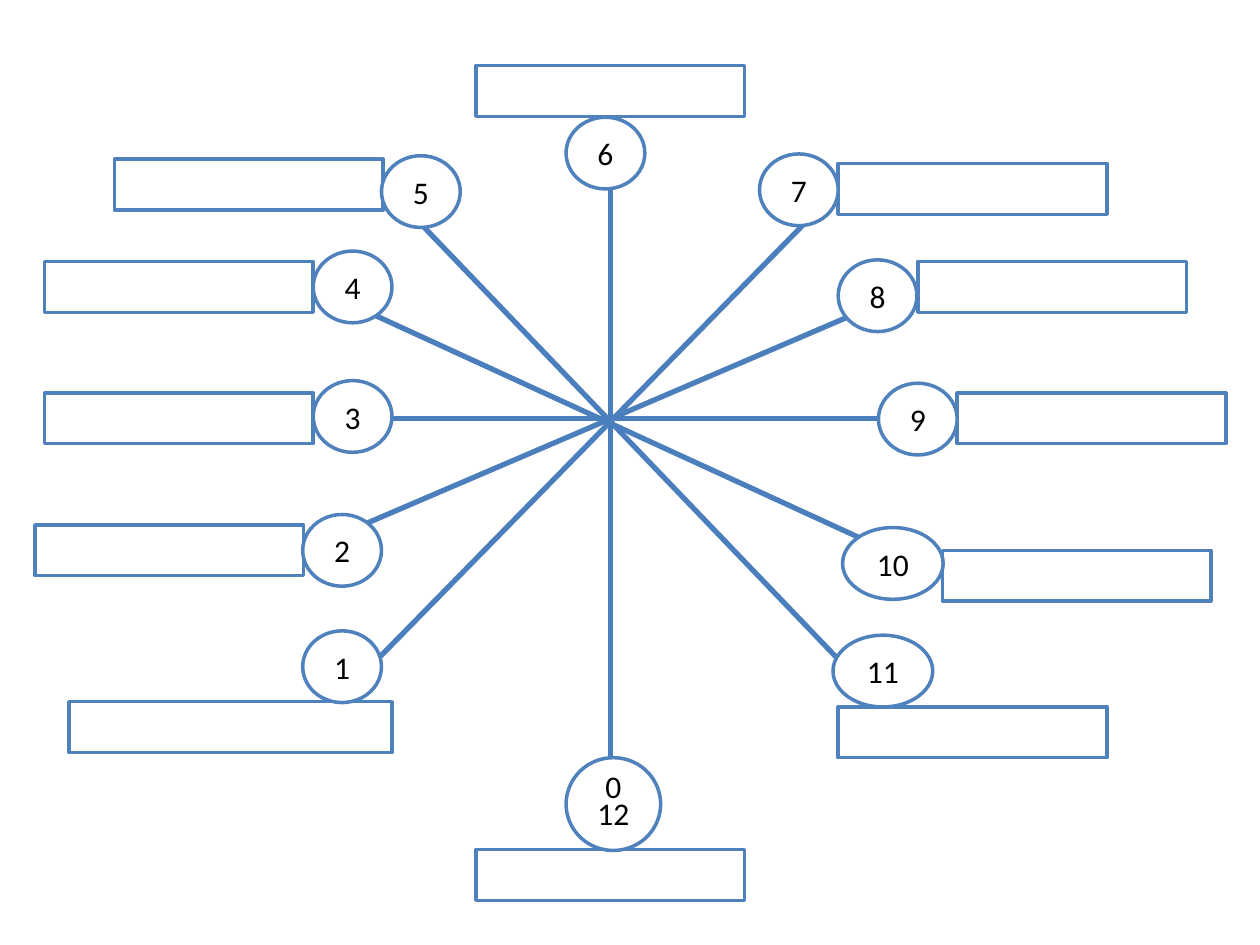
from pptx import Presentation
from pptx.dml.color import RGBColor
from pptx.enum.shapes import MSO_CONNECTOR, MSO_SHAPE
from pptx.enum.text import MSO_ANCHOR, MSO_AUTO_SIZE, PP_ALIGN
from pptx.util import Pt
from lxml import etree

RECT, OVAL = MSO_SHAPE.RECTANGLE, MSO_SHAPE.OVAL
STRAIGHT = MSO_CONNECTOR.STRAIGHT
BOTTOM, LEFT, RIGHT, TOP = 2, 1, 3, 0
A_NS = "http://schemas.openxmlformats.org/drawingml/2006/main"

THEME = {
    "fill": RGBColor(0xFF, 0xFF, 0xFF),
    "outline": RGBColor(0x4F, 0x81, 0xBD),
    "spoke": RGBColor(0x4B, 0x7E, 0xBC),
    "outline_width": Pt(2),
    "spoke_width": Pt(3),
    "font": {"name": "Calibri", "size": Pt(18)},
    "text": RGBColor(0, 0, 0),
}
FRAME = {
    "word_wrap": True,
    "auto_size": MSO_AUTO_SIZE.SHAPE_TO_FIT_TEXT,
    "vertical_anchor": MSO_ANCHOR.MIDDLE,
}

# Answer boxes by clock number: left, top, width
BOX_W, BOX_H = 153.5, 29
BOXES = {
    6: (272, 37.5, BOX_W), 9: (547, 224.5, BOX_W),
    12: (272, 485.5, BOX_W), 3: (25.5, 224.5, BOX_W),
    7: (479, 93.5, BOX_W), 10: (538.5, 314.5, BOX_W),
    1: (39.5, 401, 184.5), 4: (25.5, 149.5, BOX_W),
    2: (20, 300, BOX_W), 8: (524.5, 149.5, BOX_W),
    5: (65.5, 91, BOX_W), 11: (479, 404, BOX_W),
}

# Number circles: text, left, top, width, height
D_W, D_H = 45, 41
CIRCLES = [
    ("6", 323.5, 67, D_W, D_H), ("3", 179, 217.5, D_W, D_H),
    ("0\n12", 323.5, 433, 54, 53), ("7", 434, 88, D_W, D_H),
    ("4", 179, 143.5, D_W, D_H), ("10", 481.5, 301.5, 57.5, D_H),
    ("9", 502, 219, D_W, D_H), ("8", 479, 148.5, D_W, D_H),
    ("5", 218, 89, D_W, D_H), ("1", 173, 360.5, D_W, D_H),
    ("11", 476, 363, 57, D_H), ("2", 173, 294, D_W, D_H),
]

# Spokes: start box and side, then end box and side, or a free end point
SPOKES = [
    (6, BOTTOM, 12, TOP, None), (3, RIGHT, 9, LEFT, None),
    (7, LEFT, None, None, (168, 425.5)), (4, RIGHT, 10, LEFT, None),
    (8, LEFT, 2, RIGHT, None), (5, RIGHT, None, None, (508.5, 407.5)),
]

prs = Presentation()
prs.slide_width, prs.slide_height = Pt(720), Pt(540)
s = prs.slides.add_slide(prs.slide_layouts[6])


def add_outlined(kind, left, top, width, height):
    sp = s.shapes.add_shape(kind, Pt(left), Pt(top), Pt(width), Pt(height))
    sp.shadow.inherit = False
    sp.fill.solid()
    sp.fill.fore_color.rgb = THEME["fill"]
    sp.line.color.rgb = THEME["outline"]
    sp.line.width = THEME["outline_width"]
    return sp


# Spokes lie behind the boxes, so they are drawn first and joined afterwards
lines = []
for *_, end in SPOKES:
    x, y = end or (0, 0)
    line = s.shapes.add_connector(STRAIGHT, Pt(x), Pt(y), Pt(x), Pt(y))
    line.line.color.rgb = THEME["spoke"]
    line.line.width = THEME["spoke_width"]
    etree.SubElement(line._element.spPr, f"{{{A_NS}}}effectLst")
    lines.append(line)

# Answer boxes
boxes = {n: add_outlined(RECT, left, top, width, BOX_H)
         for n, (left, top, width) in BOXES.items()}

# Join spokes to boxes
for line, (start, start_side, stop, stop_side, _) in zip(lines, SPOKES):
    line.begin_connect(boxes[start], start_side)
    if stop:
        line.end_connect(boxes[stop], stop_side)

# Number circles
for text, *place in CIRCLES:
    sp = add_outlined(OVAL, *place)
    tf = sp.text_frame
    for name, value in FRAME.items():
        setattr(tf, name, value)
    tf.text = text
    for p in tf.paragraphs:
        p.alignment = PP_ALIGN.CENTER
        if len(tf.paragraphs) > 1:
            p.line_spacing = 0.7
        r = p.runs[0]
        for name, value in THEME["font"].items():
            setattr(r.font, name, value)
        r.font.color.rgb = THEME["text"]

prs.save("out.pptx")
